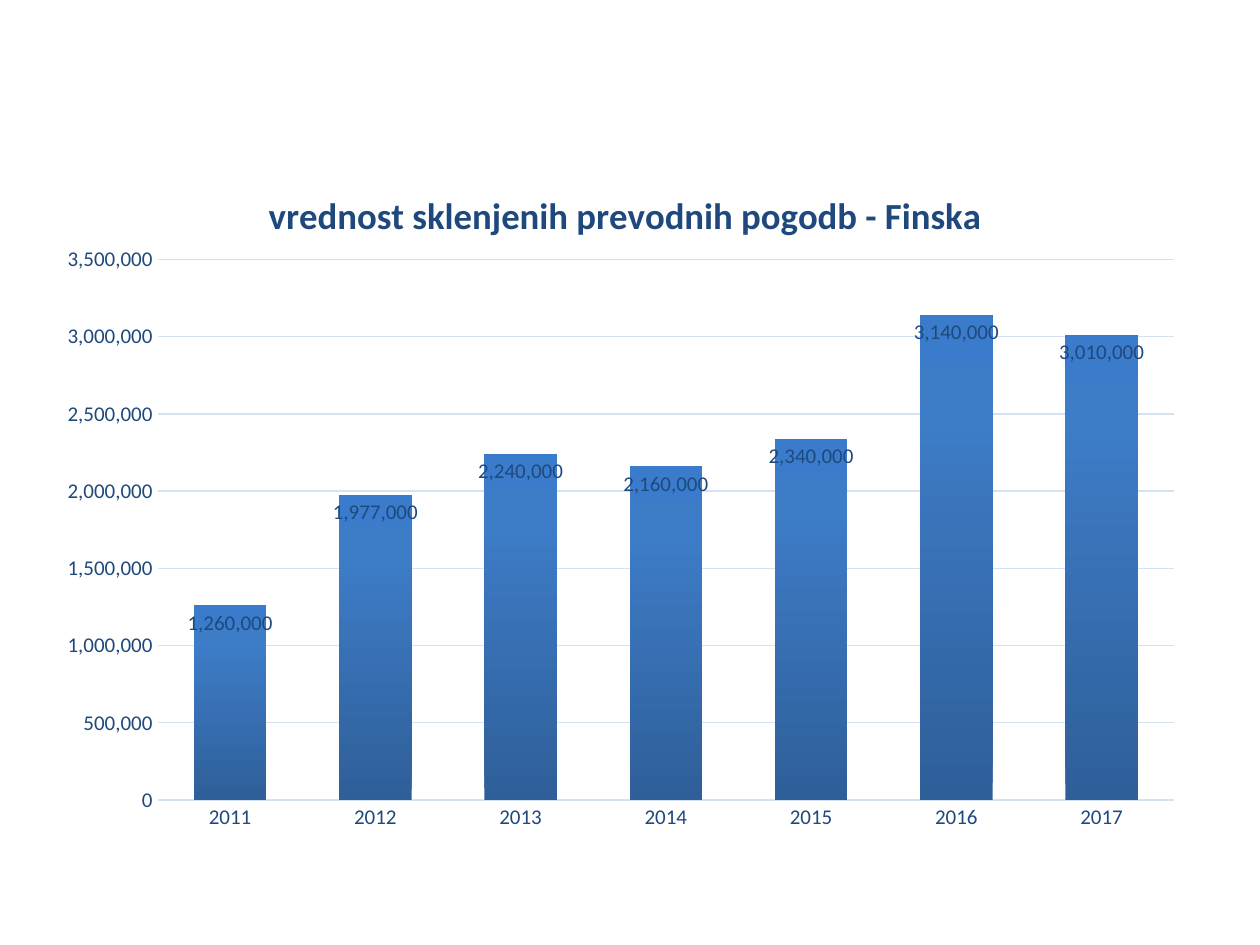
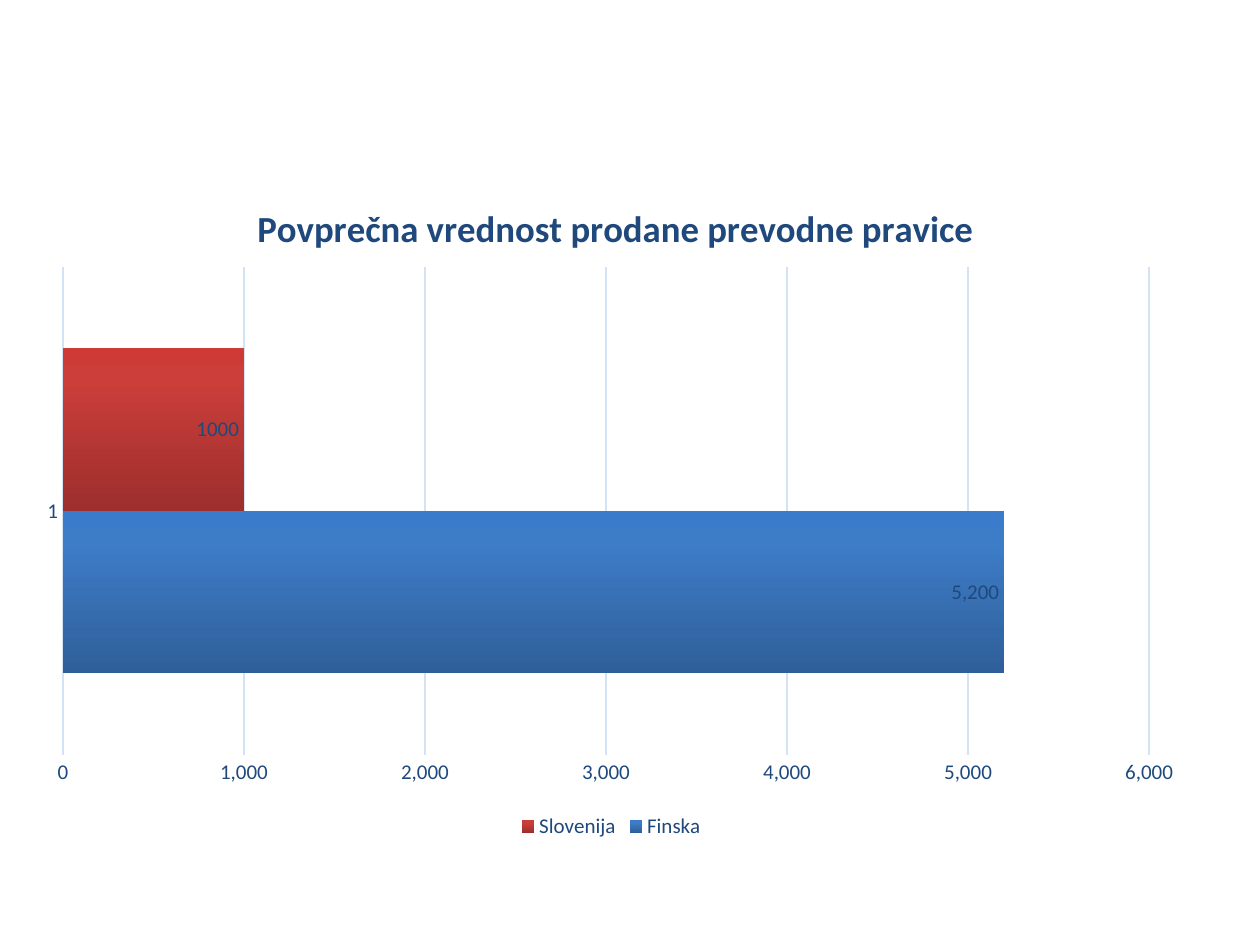
from copy import deepcopy

from lxml import etree
from pptx import Presentation
from pptx import util as u
from pptx.chart.data import CategoryChartData
from pptx.dml.color import RGBColor
from pptx.enum import chart as c
from pptx.oxml.ns import qn

SLIDE_SIZE = 10, 7.5
FONT, INK, GRID = "Calibri", "1F497D", "D4E3F4"
TITLE_SIZE, LABEL_SIZE = 21, 12
THOUSANDS = "#,##0"
BLUE = (0, "2F5F99"), (0.8, "3D7CC7"), (1, "3A7CCB")
RED = (0, "9C2F2D"), (0.8, "CB3E3A"), (1, "CE3B37")

# Boxes are left, top, width, height in inches; series are name, values, gradient, label format.
CHARTS = [
    dict(
        kind=c.XL_CHART_TYPE.COLUMN_CLUSTERED,
        title="vrednost sklenjenih prevodnih pogodb - Finska",
        box=(0.35, 1.23, 9.15, 5.47), plot_box=(1.25, 2.06, 8.07, 4.29),
        title_at=(2.08, 1.45), overlap=-24, legend=False,
        categories=["2011", "2012", "2013", "2014", "2015", "2016", "2017"],
        series=[("Series 1", [1260000, 1977000, 2240000, 2160000, 2340000, 3140000, 3010000],
                 BLUE, THOUSANDS)],
    ),
    dict(
        kind=c.XL_CHART_TYPE.BAR_CLUSTERED,
        title="Povprečna vrednost prodane prevodne pravice",
        box=(0.2, 1.31, 9.3, 5.39), plot_box=(0.5, 2.12, 8.62, 3.87),
        title_at=(1.99, 1.56), overlap=0, legend=True,
        categories=["1"],
        series=[("Finska", [5200], BLUE, THOUSANDS),
                ("Slovenija", [1000], RED, "General")],
    ),
]


def color(value):
    return RGBColor.from_string(value)


def style_font(font, size=LABEL_SIZE, bold=False):
    for name, value in dict(name=FONT, size=u.Pt(size), bold=bold).items():
        setattr(font, name, value)
    font.color.rgb = color(INK)


def style_line(line):
    line.color.rgb = color(GRID)
    line.width = u.Pt(0.75)


def place(element, index, chart_box, box):
    """Fix a chart part at a box given in slide inches."""
    for old in element.findall(qn("c:layout")):
        element.remove(old)
    layout = etree.Element(qn("c:layout"))
    manual = etree.SubElement(layout, qn("c:manualLayout"))
    left, top, width, height = chart_box
    shares = dict(x=(box[0] - left) / width, y=(box[1] - top) / height)
    settings = dict(xMode="edge", yMode="edge")
    if len(box) == 4:
        settings = dict(layoutTarget="inner", **settings)
        shares.update(w=box[2] / width, h=box[3] / height)
    for name, value in {**settings, **shares}.items():
        etree.SubElement(manual, qn("c:" + name)).set("val", str(value))
    element.insert(index, layout)


def fill_gradient(series, stops):
    fill = series.format.fill
    fill.gradient()
    fill.gradient_angle = 90
    stop_list = next(series._element.iter(qn("a:gsLst")))
    stop_list.append(deepcopy(stop_list[-1]))
    for stop, (position, value) in zip(fill.gradient_stops, stops):
        stop.position = position
        stop.color.rgb = color(value)


def style_axes(chart):
    for axis in (chart.category_axis, chart.value_axis):
        axis.major_tick_mark = axis.minor_tick_mark = c.XL_TICK_MARK.NONE
        style_font(axis.tick_labels.font)
    chart.category_axis.has_major_gridlines = False
    style_line(chart.category_axis.format.line)
    values = chart.value_axis
    values.format.line.fill.background()
    values.has_major_gridlines = True
    style_line(values.major_gridlines.format.line)
    values.tick_labels.number_format = THOUSANDS
    values.tick_labels.number_format_is_linked = False


def style_series(series, gradient, number_format):
    fill_gradient(series, gradient)
    series.invert_if_negative = False
    labels = series.data_labels
    style_font(labels.font)
    settings = dict(show_value=True, position=c.XL_LABEL_POSITION.INSIDE_END,
                    number_format=number_format, number_format_is_linked=False)
    for name, value in settings.items():
        setattr(labels, name, value)


def add_bar_chart(slide, content):
    data = CategoryChartData()
    data.categories = content["categories"]
    for name, values, *_ in content["series"]:
        data.add_series(name, values)
    box = content["box"]
    chart = slide.shapes.add_chart(content["kind"], *map(u.Inches, box), data).chart
    style_font(chart.font)

    chart.has_title = True
    run = chart.chart_title.text_frame.paragraphs[0].add_run()
    run.text = content["title"]
    style_font(run.font, TITLE_SIZE, bold=True)
    place(chart.chart_title._element, 1, box, content["title_at"])
    place(next(chart._chartSpace.iter(qn("c:plotArea"))), 0, box, content["plot_box"])

    style_axes(chart)
    plot = chart.plots[0]
    settings = dict(gap_width=100, overlap=content["overlap"], vary_by_categories=False)
    for name, value in settings.items():
        setattr(plot, name, value)
    for series, (_, _, gradient, number_format) in zip(plot.series, content["series"]):
        style_series(series, gradient, number_format)

    chart.has_legend = content["legend"]
    if chart.has_legend:
        chart.legend.position = c.XL_LEGEND_POSITION.BOTTOM
        chart.legend.include_in_layout = False
        style_font(chart.legend.font)


def main():
    presentation = Presentation()
    presentation.slide_width, presentation.slide_height = map(u.Inches, SLIDE_SIZE)
    for content in CHARTS:
        add_bar_chart(presentation.slides.add_slide(presentation.slide_layouts[6]), content)
    presentation.save("out.pptx")


if __name__ == "__main__":
    main()
